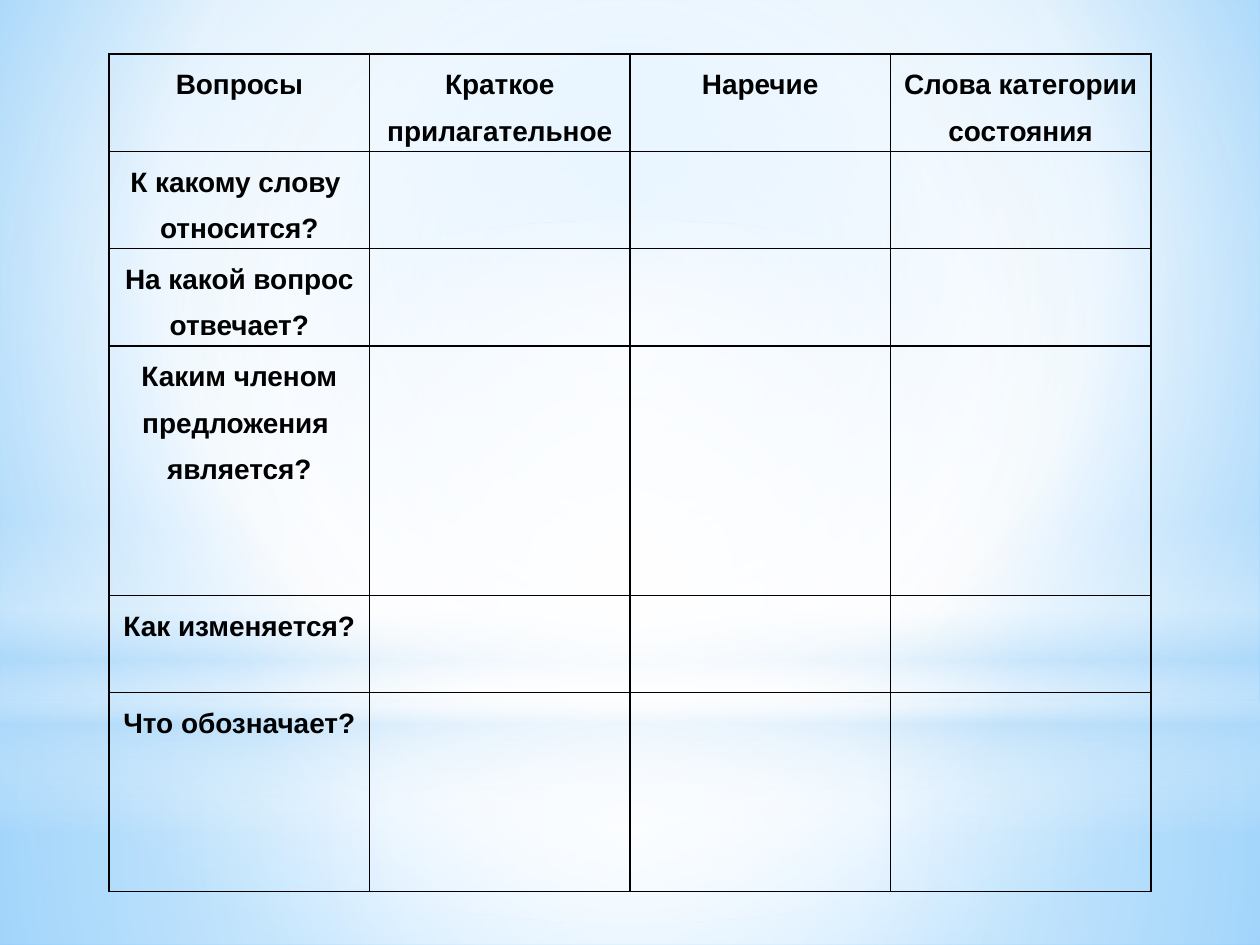
from lxml import etree
from pptx import Presentation
from pptx.dml.color import RGBColor
from pptx.enum.shapes import MSO_SHAPE
from pptx.enum.text import PP_ALIGN
from pptx.oxml.ns import qn
from pptx.util import Cm, Pt

RECTANGLE = MSO_SHAPE.RECTANGLE
OVAL = MSO_SHAPE.OVAL
CENTER = PP_ALIGN.CENTER

WIDTH, HEIGHT = 25.4, 19.05
HORIZON = 14.17
MIDDLE = (50, 50, 50, 50)
COLUMN_WIDTH = 5.25
ROW_HEIGHTS = [1.96, 1.96, 1.96, 5.03, 1.96, 4.01]
HEADINGS = [
    ["Вопросы"],
    ["Краткое", "прилагательное"],
    ["Наречие"],
    ["Слова категории состояния"],
]
QUESTIONS = [
    ["К какому слову ", "относится?"],
    ["На какой вопрос отвечает?"],
    ["Каким членом предложения ", "является?"],
    ["Как изменяется?"],
    ["Что обозначает?"],
]


def add_colour(parent, colour, opacity=100):
    element = etree.SubElement(parent, qn("a:srgbClr"), val=colour)
    if opacity < 100:
        etree.SubElement(element, qn("a:alpha"), val=str(opacity * 1000))


def set_gradient(fill, owner, stops, center=None, angle=0):
    fill.gradient()
    gradient = next(owner.iter(qn("a:gradFill")))
    for child in list(gradient):
        gradient.remove(child)
    stop_list = etree.SubElement(gradient, qn("a:gsLst"))
    for position, colour, opacity in stops:
        stop = etree.SubElement(stop_list, qn("a:gs"), pos=str(position * 1000))
        add_colour(stop, colour, opacity)
    if center:
        circle = etree.SubElement(gradient, qn("a:path"), path="circle")
        sides = {side: str(value * 1000) for side, value in zip("ltrb", center)}
        etree.SubElement(circle, qn("a:fillToRect"), **sides)
    else:
        etree.SubElement(gradient, qn("a:lin"), ang=str(angle * 60000), scaled="0")


def add_glow(slide, kind, top, height, stops, center=MIDDLE, angle=0):
    shape = slide.shapes.add_shape(kind, Cm(0), Cm(top), Cm(WIDTH), Cm(height))
    shape.shadow.inherit = False
    shape.line.fill.background()
    set_gradient(shape.fill, shape.element, stops, center, angle)


def add_backdrop(slide):
    set_gradient(
        slide.background.fill,
        slide.element,
        [(0, "9ED5FF", 100), (60, "FFFFFF", 100), (100, "5BB9FF", 100)],
        (20, 10, 20, 60),
    )
    add_glow(slide, RECTANGLE, HORIZON, HEIGHT - HORIZON,
             [(0, "FFFFFF", 91), (37, "FFFFFF", 76), (100, "B4DCFA", 79)])
    add_glow(slide, RECTANGLE, 0, HORIZON,
             [(0, "FFFFFF", 89), (48, "FFFFFF", 62), (100, "B4DCFA", 79)])
    add_glow(slide, RECTANGLE, 10.46, 6.35,
             [(0, "FFFFFF", 0), (29, "FFFFFF", 30), (45, "B4DCFA", 40),
              (55, "FFFFFF", 26), (65, "B4DCFA", 60), (100, "FFFFFF", 0)],
             center=None, angle=90)
    add_glow(slide, OVAL, 4.45, HORIZON,
             [(0, "FFFFFF", 100), (56, "FFFFFF", 0)])


def style_cell(cell):
    properties = cell._tc.get_or_add_tcPr()
    for side in ("lnL", "lnR", "lnT", "lnB"):
        border = etree.SubElement(properties, qn(f"a:{side}"), w=str(Pt(1)))
        add_colour(etree.SubElement(border, qn("a:solidFill")), "000000")
    cell.fill.background()
    cell.margin_left = cell.margin_right = Cm(0.15)
    cell.margin_top = cell.margin_bottom = Cm(0)


def write_cell(cell, lines):
    for index, line in enumerate(lines):
        frame = cell.text_frame
        paragraph = frame.add_paragraph() if index else frame.paragraphs[0]
        paragraph.alignment = CENTER
        paragraph.line_spacing = 1.5
        run = paragraph.add_run()
        run.text = line
        run.font.name = "Arial"
        run.font.size = Pt(16)
        run.font.bold = True
        run.font.color.rgb = RGBColor.from_string("000000")


def add_question_table(slide):
    rows = [HEADINGS] + [[question] for question in QUESTIONS]
    table = slide.shapes.add_table(
        len(rows), len(HEADINGS), Cm(2.2), Cm(1.09),
        Cm(COLUMN_WIDTH * len(HEADINGS)), Cm(sum(ROW_HEIGHTS)),
    ).table
    table.first_row = False
    table.horz_banding = False
    for column in table.columns:
        column.width = Cm(COLUMN_WIDTH)
    for row, height in zip(table.rows, ROW_HEIGHTS):
        row.height = Cm(height)
    for cell in table.iter_cells():
        style_cell(cell)
    for row, texts in zip(table.rows, rows):
        for cell, lines in zip(row.cells, texts):
            write_cell(cell, lines)


def main():
    presentation = Presentation()
    presentation.slide_width = Cm(WIDTH)
    presentation.slide_height = Cm(HEIGHT)
    slide = presentation.slides.add_slide(presentation.slide_layouts[6])
    add_backdrop(slide)
    add_question_table(slide)
    presentation.save("out.pptx")


if __name__ == "__main__":
    main()
